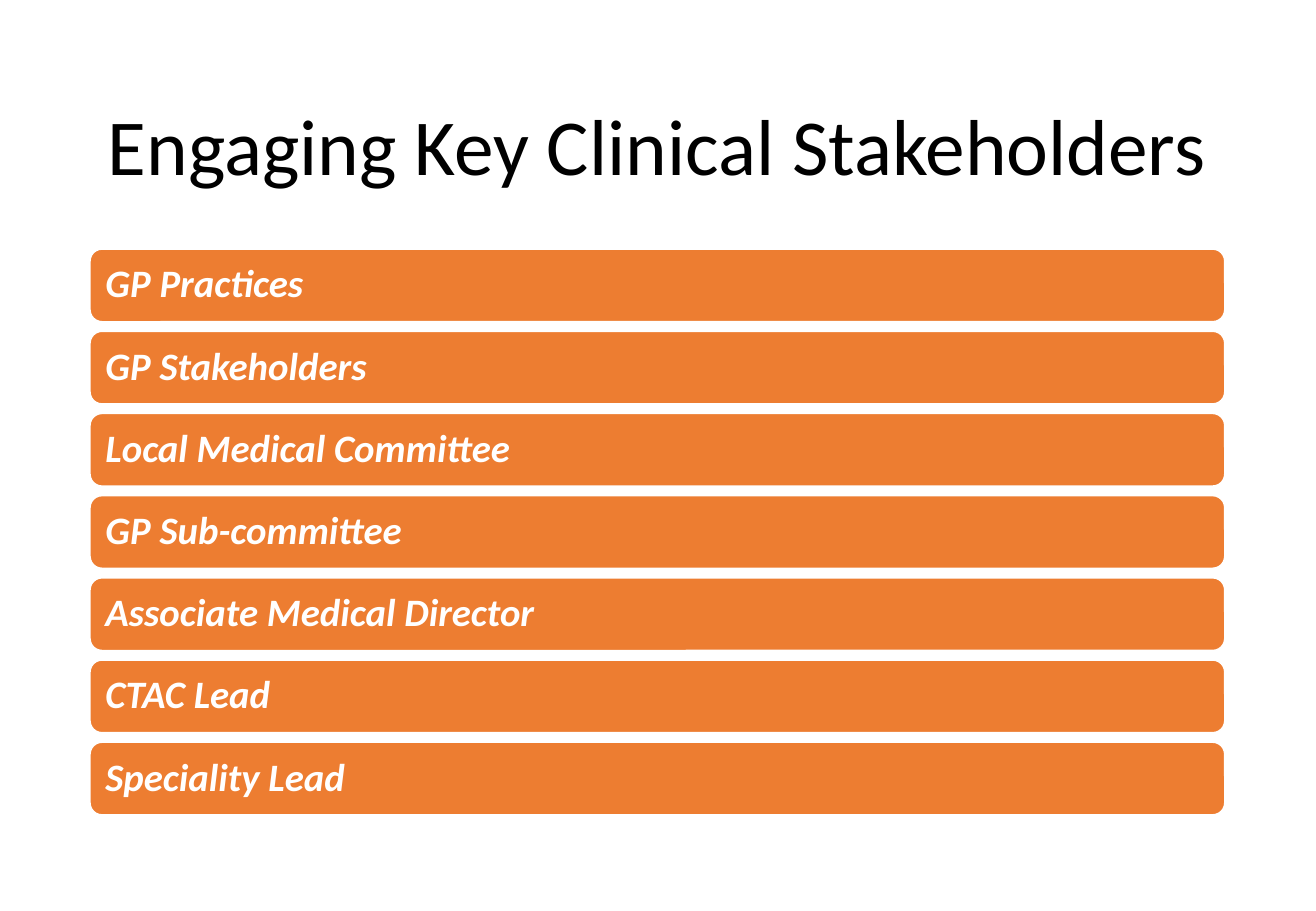
from pptx import Presentation
from pptx.dml.color import RGBColor
from pptx.enum.shapes import MSO_SHAPE as Shape
from pptx.enum.text import MSO_ANCHOR as Anchor, PP_ALIGN as Align
from pptx.util import Inches, Pt

STAKEHOLDERS = [
    "GP Practices",
    "GP Stakeholders",
    "Local Medical Committee",
    "GP Sub-committee",
    "Associate Medical Director",
    "CTAC Lead",
    "Speciality Lead",
]
LEFT, WIDTH = 0.74, 9.34
FIRST_TOP, LAST_TOP, BAR_HEIGHT = 2.05, 6.11, 0.6


def color(value):
    return RGBColor.from_string(value)


def write(shape, text, size, fill, align=Align.LEFT, bold=False, italic=False, font="Calibri"):
    frame = shape.text_frame
    frame.word_wrap = True
    frame.vertical_anchor = Anchor.MIDDLE
    frame.margin_left = frame.margin_right = Inches(0.1)
    paragraph = frame.paragraphs[0]
    paragraph.text = text
    paragraph.alignment = align
    paragraph.line_spacing = 0.9
    paragraph.font.name = font
    paragraph.font.size = Pt(size)
    paragraph.font.bold = bold
    paragraph.font.italic = italic
    paragraph.font.color.rgb = color(fill)


class StakeholderSlide:
    white, black, orange = "FFFFFF", "000000", "ED7D31"

    def __init__(self, presentation):
        self.slide = presentation.slides.add_slide(presentation.slide_layouts[5])
        background = self.slide.background.fill
        background.solid()
        background.fore_color.rgb = color(self.white)

    def title(self, text, left, top, width, height):
        shape = self.slide.shapes.title
        shape.left, shape.top = Inches(left), Inches(top)
        shape.width, shape.height = Inches(width), Inches(height)
        write(shape, text, 47, self.black, align=Align.CENTER)

    def bar(self, text, left, top, width, height):
        shape = self.slide.shapes.add_shape(
            Shape.ROUNDED_RECTANGLE, Inches(left), Inches(top), Inches(width), Inches(height))
        shape.shadow.inherit = False
        shape.fill.solid()
        shape.fill.fore_color.rgb = color(self.orange)
        shape.line.color.rgb = color(self.white)
        shape.line.width = Pt(1)
        write(shape, text, 23, self.white, bold=True, italic=True)


def main():
    presentation = Presentation()
    presentation.slide_width, presentation.slide_height = Inches(10.83), Inches(7.5)
    slide = StakeholderSlide(presentation)
    slide.title("Engaging Key Clinical Stakeholders", LEFT, 0.61, WIDTH, 1.24)
    pitch = (LAST_TOP - FIRST_TOP) / (len(STAKEHOLDERS) - 1)
    for index, name in enumerate(STAKEHOLDERS):
        slide.bar(name, LEFT, FIRST_TOP + index * pitch, WIDTH, BAR_HEIGHT)
    presentation.save("out.pptx")


if __name__ == "__main__":
    main()
